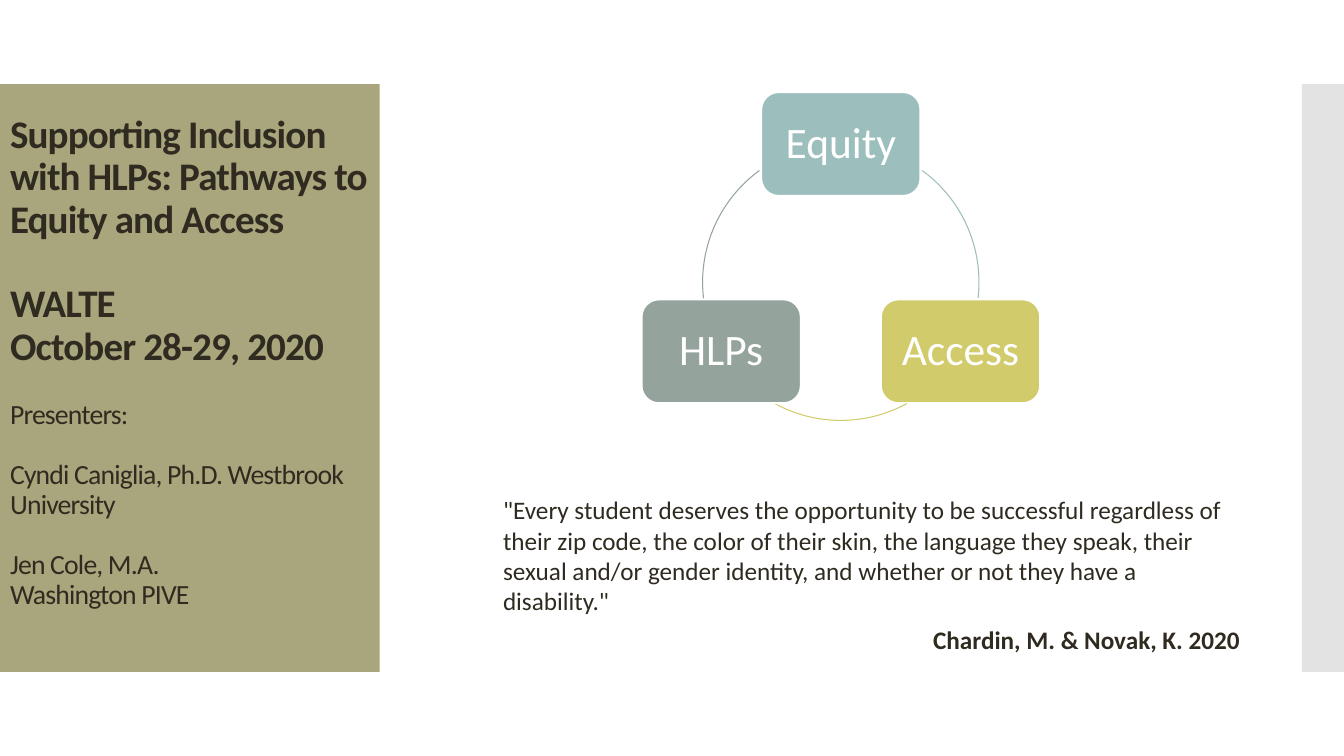
import math
from dataclasses import dataclass

from lxml import etree
from pptx import Presentation
from pptx.dml.color import RGBColor
from pptx.enum.shapes import MSO_SHAPE
from pptx.enum.text import MSO_ANCHOR, MSO_AUTO_SIZE, PP_ALIGN
from pptx.oxml.ns import qn
from pptx.util import Inches, Pt

RECT, ROUNDED, ARC = MSO_SHAPE.RECTANGLE, MSO_SHAPE.ROUNDED_RECTANGLE, MSO_SHAPE.ARC
LEFT, CENTER, RIGHT = PP_ALIGN.LEFT, PP_ALIGN.CENTER, PP_ALIGN.RIGHT
MIDDLE = MSO_ANCHOR.MIDDLE

FONT = "Calibri"
COLORS = {
    "ink": "2F2B20", "white": "FFFFFF", "olive": "A9A57C", "grey": "C8C8C8",
    "teal": "9CBEBD", "yellow": "D2CB6C", "sage": "95A39D",
}

# Grid of 160 columns by 90 rows with square cells
SLIDE_W, SLIDE_H = Inches(13.333), Inches(7.5)
CELL = SLIDE_H / 90


@dataclass
class Box:
    col: float
    row: float
    cols: float
    rows: float

    def emu(self) -> list[int]:
        return [round(v * CELL) for v in (self.col, self.row, self.cols, self.rows)]


@dataclass
class TextBlock:
    text: str
    size: float
    bold: bool = False
    before: float = 0
    after: float = 0
    align: int = LEFT
    line_spacing: float = 0.9
    color: str = "ink"
    tracking: int = 0


@dataclass
class Node:
    label: str
    color: str
    angle: float
    arc_start: float
    arc_end: float


TITLE = [
    TextBlock("Supporting Inclusion with HLPs: Pathways to Equity and Access",
              27.9, True, tracking=-60),
    TextBlock("WALTE\vOctober 28-29, 2020", 27.9, True, 30.5, tracking=-60),
    TextBlock("Presenters:", 19.8, before=23, tracking=-60),
    TextBlock("Cyndi Caniglia, Ph.D. Westbrook University", 19.8, before=21.5, tracking=-60),
    TextBlock("Jen Cole, M.A.\vWashington PIVE", 19.8, before=21.5, tracking=-60),
]
QUOTE = [
    TextBlock('"Every student deserves the opportunity to be successful regardless of '
              "their zip code, the color of their skin, the language they speak, their "
              "sexual and/or gender identity, and whether or not they have a "
              'disability."', 18, after=6, line_spacing=1),
    TextBlock("Chardin, M. & Novak, K. 2020", 18, True, after=6, align=RIGHT, line_spacing=1),
]
NODES = [
    Node("Equity", "teal", -90, 306.1, 6.7),
    Node("Access", "yellow", 30, 61.4, 118.6),
    Node("HLPs", "sage", 150, 173.3, 233.9),
]
CENTER_COL, CENTER_ROW, RADIUS = 100.1, 33.6, 16.45
NODE_COLS, NODE_ROWS = 18.95, 12.35


def rgb(name: str) -> RGBColor:
    return RGBColor.from_string(COLORS[name])


def add_filled(s, kind, box: Box, color: str):
    sp = s.shapes.add_shape(kind, *box.emu())
    sp.shadow.inherit = False
    sp.fill.solid()
    sp.fill.fore_color.rgb = rgb(color)
    sp.line.fill.background()
    return sp


def write(tf, blocks: list[TextBlock]) -> None:
    tf.word_wrap = True
    for i, block in enumerate(blocks):
        p = tf.add_paragraph() if i else tf.paragraphs[0]
        p.text = block.text
        p.alignment = block.align
        p.line_spacing = block.line_spacing
        p.space_before, p.space_after = Pt(block.before), Pt(block.after)
        for r in p.runs:
            r.font.name, r.font.size, r.font.bold = FONT, Pt(block.size), block.bold
            r.font.color.rgb = rgb(block.color)
            if block.tracking:
                r._r.get_or_add_rPr().set("spc", str(block.tracking))


def add_node(s, node: Node) -> None:
    angle = math.radians(node.angle)
    box = Box(CENTER_COL + RADIUS * math.cos(angle) - NODE_COLS / 2,
              CENTER_ROW + RADIUS * math.sin(angle) - NODE_ROWS / 2,
              NODE_COLS, NODE_ROWS)
    sp = add_filled(s, ROUNDED, box, node.color)
    sp.line.color.rgb = rgb("white")
    sp.line.width = Pt(1.35)
    sp.text_frame.vertical_anchor = MIDDLE
    write(sp.text_frame, [TextBlock(node.label, 31, align=CENTER, color="white")])


def add_arc(s, node: Node) -> None:
    box = Box(CENTER_COL - RADIUS, CENTER_ROW - RADIUS, 2 * RADIUS, 2 * RADIUS)
    sp = s.shapes.add_shape(ARC, *box.emu())
    sp.shadow.inherit = False
    sp.fill.background()
    sp.line.color.rgb = rgb(node.color)
    sp.line.width = Pt(0.75)
    # Arc angles are stored in 60000ths of a degree, adjustments in 100000ths
    sp.adjustments[0] = node.arc_start * 0.6
    sp.adjustments[1] = node.arc_end * 0.6


def main() -> None:
    prs = Presentation()
    prs.slide_width, prs.slide_height = SLIDE_W, SLIDE_H
    s = prs.slides.add_slide(prs.slide_layouts[5])

    # Side panels
    add_filled(s, RECT, Box(0, 10, 45.2, 70), "olive")
    strip = add_filled(s, RECT, Box(155, 10, 5, 70), "grey")
    tint = strip.fill._xPr.find(".//" + qn("a:srgbClr"))
    etree.SubElement(tint, qn("a:alpha")).set("val", "50000")

    # Title, brought in front of its panel
    title = s.shapes.title
    title.left, title.top, title.width, title.height = Box(0, 14.8, 45, 60.4).emu()
    tf = title.text_frame
    tf.auto_size = MSO_AUTO_SIZE.NONE
    tf.vertical_anchor = MIDDLE
    tf.margin_bottom = Inches(0.35)
    write(tf, TITLE)
    s.shapes._spTree.append(title._element)

    # Quotation
    quote = s.shapes.add_textbox(*Box(58.7, 58.3, 90.1, 20.4).emu())
    write(quote.text_frame, QUOTE)

    # Cycle diagram
    for node in NODES:
        add_node(s, node)
        add_arc(s, node)

    prs.save("out.pptx")


if __name__ == "__main__":
    main()
